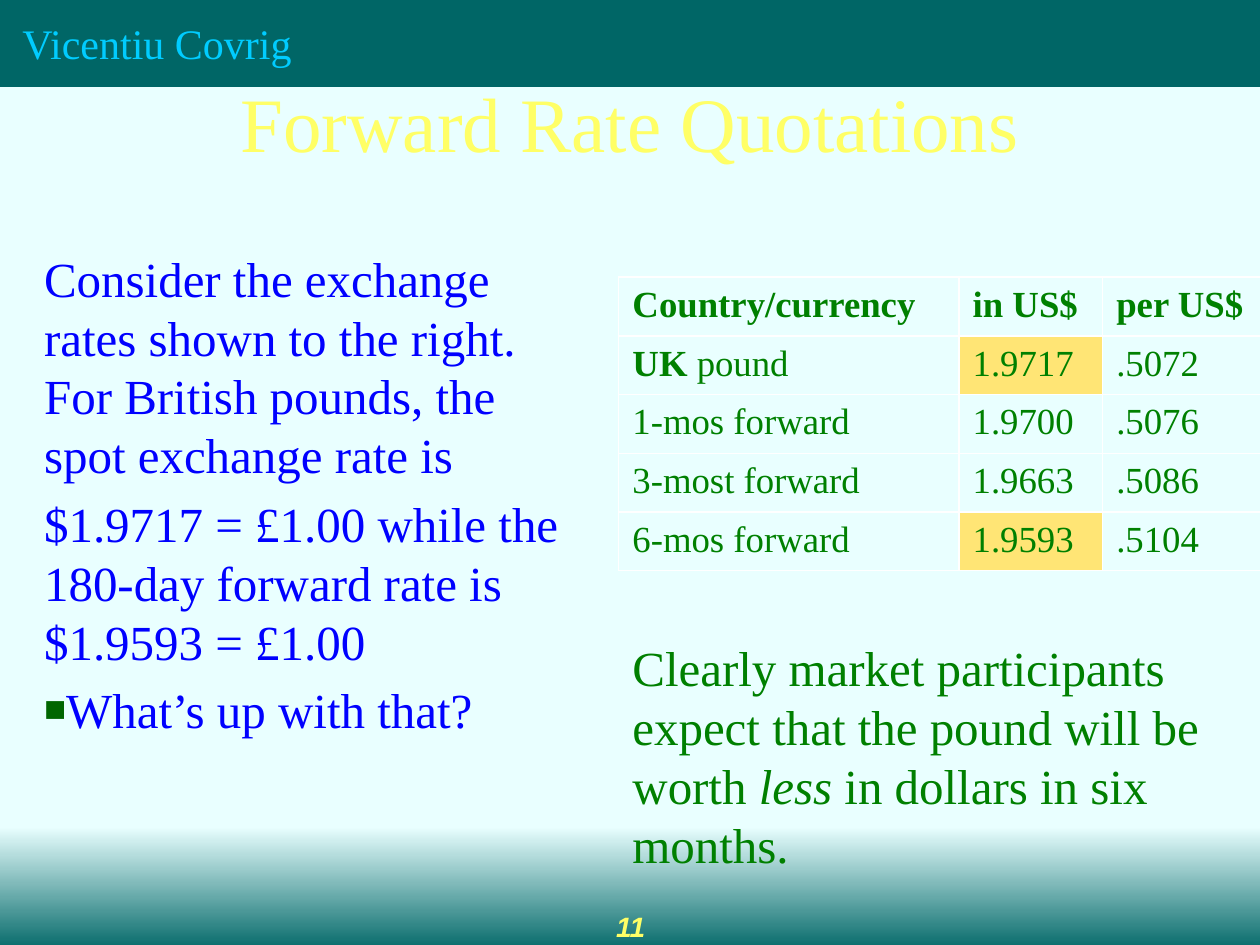
from lxml.etree import SubElement
from pptx import Presentation
from pptx.dml.color import RGBColor
from pptx.enum.shapes import MSO_SHAPE as Shape
from pptx.enum.text import MSO_ANCHOR as Anchor, MSO_AUTO_SIZE as AutoSize, PP_ALIGN as Align
from pptx.oxml.ns import qn
from pptx.util import Inches, Pt

PALE = RGBColor(0xE9, 0xFF, 0xFF)
TEAL = RGBColor(0x00, 0x66, 0x66)
CYAN = RGBColor(0x00, 0xCC, 0xFF)
YELLOW = RGBColor(0xFF, 0xFF, 0x66)
BLUE = RGBColor(0x00, 0x00, 0xFF)
GREEN = RGBColor(0x00, 0x80, 0x00)
BULLET_GREEN = "006600"
HIGHLIGHT = RGBColor(0xFF, 0xE5, 0x75)

RATES = [
    ("Country/currency", "in US$", "per US$"),
    ("UK pound", "1.9717", ".5072"),
    ("1-mos forward", "1.9700", ".5076"),
    ("3-most forward", "1.9663", ".5086"),
    ("6-mos forward", "1.9593", ".5104"),
]
HIGHLIGHTED_RATES = {"1.9717", "1.9593"}
RATE_WIDTHS = (2.7, 1.14, 1.26)


def write(paragraph, text, size, color, font="Times New Roman", bold=False,
          italic=False, align=Align.LEFT, line_spacing=None):
    paragraph.alignment = align
    if line_spacing:
        paragraph.line_spacing = line_spacing
    run = paragraph.add_run()
    run.text = text
    run.font.name = font
    run.font.size = Pt(size)
    run.font.bold = bold
    run.font.italic = italic
    run.font.color.rgb = color


def place(shape, box):
    shape.left, shape.top, shape.width, shape.height = map(Inches, box)


def prepare_frame(frame):
    frame.word_wrap = True
    frame.auto_size = AutoSize.NONE
    frame.vertical_anchor = Anchor.TOP
    return frame


def add_text_frame(slide, box):
    return prepare_frame(slide.shapes.add_textbox(*map(Inches, box)).text_frame)


def set_bullet(paragraph, char=None):
    properties = paragraph._p.get_or_add_pPr()
    properties.set("marL", "0")
    properties.set("indent", "0")
    if char is None:
        SubElement(properties, qn("a:buNone"))
        return
    color = SubElement(properties, qn("a:buClr"))
    SubElement(color, qn("a:srgbClr"), val=BULLET_GREEN)
    SubElement(properties, qn("a:buSzPct"), val="75000")
    SubElement(properties, qn("a:buChar"), char=char)


def add_band(slide, box):
    band = slide.shapes.add_shape(Shape.RECTANGLE, *map(Inches, box))
    band.shadow.inherit = False
    band.line.fill.background()
    return band


def add_footer(slide, box):
    fill = add_band(slide, box).fill
    fill.gradient()
    fill.gradient_angle = 270
    for stop, color, position in zip(fill.gradient_stops, (PALE, TEAL), (0, 1)):
        stop.color.rgb = color
        stop.position = position
    left, top, width, _ = box
    number = add_text_frame(slide, (left + width / 2 - 1.2, top + 0.61, 2.33, 0.5))
    write(number.paragraphs[0], "11", 16, YELLOW, font="Arial", bold=True,
          italic=True, align=Align.CENTER)


def add_header(slide, box):
    fill = add_band(slide, box).fill
    fill.solid()
    fill.fore_color.rgb = TEAL
    left, top, _, _ = box
    author = add_text_frame(slide, (left + 0.08, top + 0.2, 4.08, 0.38))
    write(author.paragraphs[0], "Vicentiu Covrig", 24, CYAN, line_spacing=0.7)


def fill_title(slide, box):
    title = slide.shapes.title
    place(title, box)
    frame = prepare_frame(title.text_frame)
    write(frame.paragraphs[0], "Forward Rate Quotations", 44, YELLOW,
          align=Align.CENTER, line_spacing=0.7)


def fill_question(slide, box):
    body = slide.placeholders[1]
    place(body, box)
    frame = prepare_frame(body.text_frame)
    points = [
        ("Consider the exchange rates shown to the right. For British pounds, "
         "the spot exchange rate is", None),
        ("$1.9717 = £1.00 while the 180-day forward rate is $1.9593 = £1.00", None),
        ("What’s up with that?", "■"),
    ]
    for index, (text, bullet) in enumerate(points):
        paragraph = frame.add_paragraph() if index else frame.paragraphs[0]
        set_bullet(paragraph, bullet)
        paragraph.space_before = Pt(5.6 if index else 0)
        write(paragraph, text, 28, BLUE)


def add_rates(slide, box):
    table = slide.shapes.add_table(len(RATES), len(RATE_WIDTHS), *map(Inches, box)).table
    table.first_row = table.horz_banding = False
    for column, width in zip(table.columns, RATE_WIDTHS):
        column.width = Inches(width)
    for row, values in enumerate(RATES):
        for column, value in enumerate(values):
            cell = table.cell(row, column)
            cell.margin_left = cell.margin_right = Inches(0.11)
            cell.margin_top = cell.margin_bottom = Inches(0.06)
            if value in HIGHLIGHTED_RATES:
                cell.fill.solid()
                cell.fill.fore_color.rgb = HIGHLIGHT
            else:
                cell.fill.background()
            paragraph = cell.text_frame.paragraphs[0]
            if value.startswith("UK "):
                write(paragraph, "UK ", 21, GREEN, bold=True)
                value = value.removeprefix("UK ")
            write(paragraph, value, 21, GREEN, bold=row == 0)


def add_conclusion(slide, box):
    frame = add_text_frame(slide, box)
    frame.margin_left = frame.margin_right = Inches(0.11)
    frame.margin_top = frame.margin_bottom = Inches(0.06)
    paragraph = frame.paragraphs[0]
    write(paragraph, "Clearly market participants expect that the pound will be worth ",
          28, GREEN)
    write(paragraph, "less", 28, GREEN, italic=True)
    write(paragraph, " in dollars in six months.", 28, GREEN)


def main():
    deck = Presentation()
    deck.slide_width, deck.slide_height = Inches(10), Inches(7.5)
    slide = deck.slides.add_slide(deck.slide_layouts[1])
    background = slide.background.fill
    background.solid()
    background.fore_color.rgb = PALE
    add_footer(slide, (-0.02, 6.56, 10.12, 1))
    add_header(slide, (0, 0, 10.06, 0.69))
    fill_title(slide, (0.5, 0.75, 9, 0.8))
    fill_question(slide, (0.25, 1.92, 4.51, 5.29))
    add_rates(slide, (4.91, 2.2, sum(RATE_WIDTHS), 2.33))
    add_conclusion(slide, (4.91, 5, 5, 2))
    deck.save("out.pptx")


if __name__ == "__main__":
    main()
